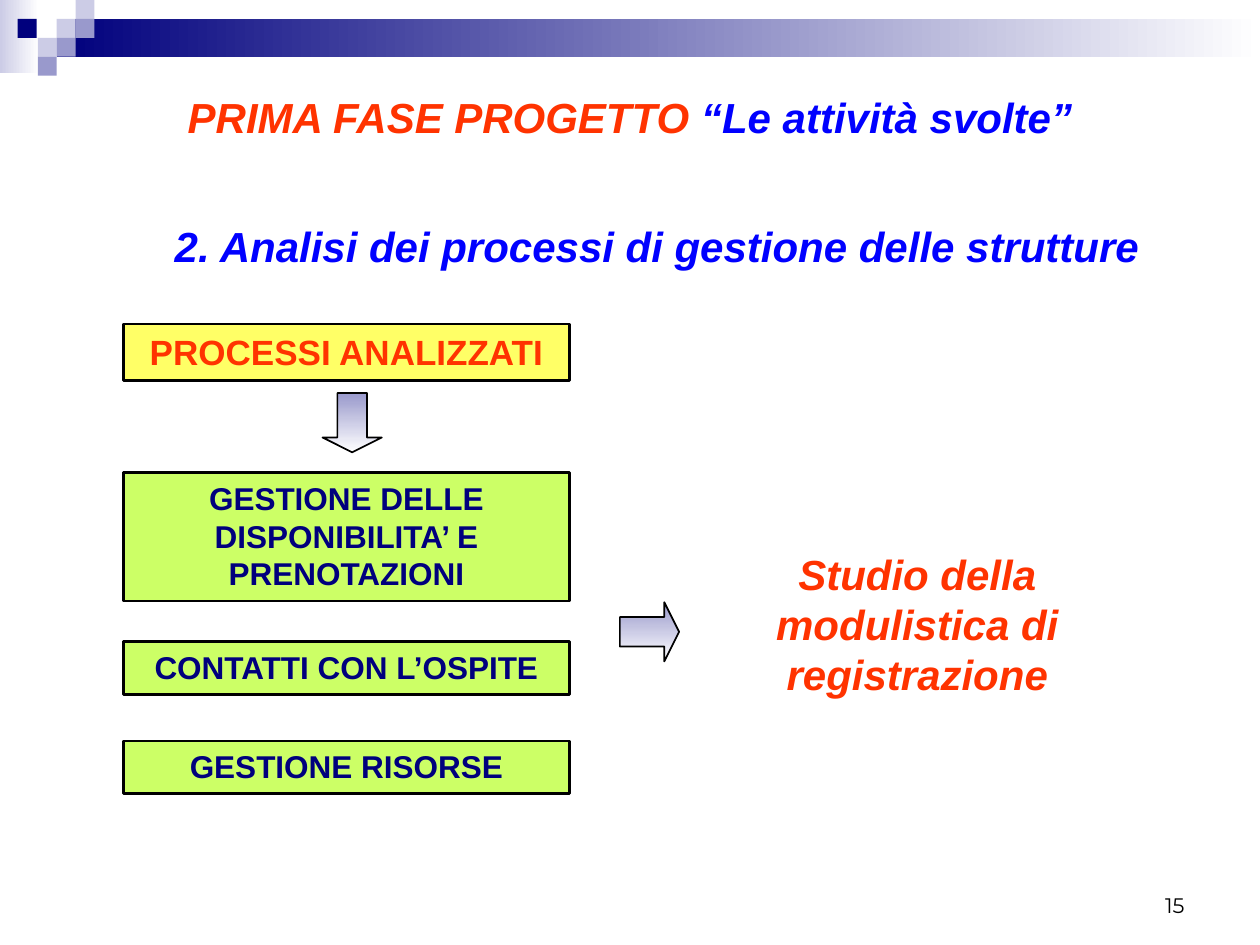
import pptx
import pptx.util
from pptx.dml.color import RGBColor
from pptx.enum.shapes import MSO_SHAPE
from pptx.enum.text import MSO_ANCHOR, MSO_AUTO_SIZE, PP_ALIGN
from pptx.oxml.ns import qn
from pptx.util import Inches

COLORS = {
    "navy": "00007D", "lavender": "CCCCE6", "violet": "9999CC", "white": "FFFFFF",
    "blue": "0000FF", "red": "FF3300", "lime": "CCFF66", "yellow": "FFFF66",
    "black": "000000",
}


def rgb(name):
    return RGBColor.from_string(COLORS[name])


def fill_gradient(shape, start, end, angle):
    """Two-colour gradient that keeps its direction when the shape is rotated."""
    shape.fill.gradient()
    shape.fill.gradient_angle = angle
    for stop, color in zip(shape.fill.gradient_stops, (start, end)):
        stop.color.rgb = rgb(color)
    shape._element.spPr.find(qn("a:gradFill")).set("rotWithShape", "0")


def add_block(slide, bounds, fill=None, preset=MSO_SHAPE.RECTANGLE, line_width=None):
    shape = slide.shapes.add_shape(preset, *map(Inches, bounds))
    shape.shadow.inherit = False
    if fill:
        shape.fill.solid()
        shape.fill.fore_color.rgb = rgb(fill)
    if line_width:
        shape.line.color.rgb = rgb("black")
        shape.line.width = pptx.util.Pt(line_width)
    else:
        shape.line.fill.background()
    return shape


def write_text(shape, parts, size, align=PP_ALIGN.CENTER, font="Arial", bold=True, italic=False):
    """Fill a shape with one paragraph of (text, colour) parts."""
    shape.text_frame.word_wrap = True
    paragraph = shape.text_frame.paragraphs[0]
    paragraph.alignment = align
    for text, color in parts:
        run = paragraph.add_run()
        run.text = text
        run.font.name = font
        run.font.size = pptx.util.Pt(size)
        run.font.bold = bold
        run.font.italic = italic
        run.font.color.rgb = rgb(color)
    return paragraph


def add_heading(slide, bounds, parts):
    box = slide.shapes.add_textbox(*map(Inches, bounds))
    paragraph = write_text(box, parts, 24, italic=True)
    paragraph.space_before = pptx.util.Pt(0)
    spacing = paragraph._p.pPr.find(qn("a:spcBef"))
    spacing.remove(spacing[0])
    spacing.makeelement(qn("a:spcPct"), {"val": "20000"})
    spacing.append(spacing.makeelement(qn("a:spcPct"), {"val": "20000"}))


def add_process(slide, top, height, text, size=18, fill="lime", color="navy"):
    box = add_block(slide, (0.98, top, 3.54, height), fill, line_width=1.5)
    box.text_frame.vertical_anchor = MSO_ANCHOR.TOP
    write_text(box, [(text, color)], size)
    box.text_frame.auto_size = MSO_AUTO_SIZE.SHAPE_TO_FIT_TEXT


def add_arrow(slide, left, top, rotation=0):
    arrow = add_block(slide, (left, top, 0.47, 0.47), preset=MSO_SHAPE.RIGHT_ARROW, line_width=1)
    arrow.adjustments[0] = 0.5
    arrow.adjustments[1] = 0.25
    arrow.rotation = rotation
    fill_gradient(arrow, "violet", "white", 270)


def add_banner(slide):
    fill_gradient(add_block(slide, (0, 0, 0.31, 0.58)), "lavender", "white", 0)
    fill_gradient(add_block(slide, (0.45, 0.15, 9.55, 0.3)), "navy", "white", 0)
    tiles = [
        (0.45, 0.15, "lavender"), (0.6, 0, "lavender"), (0.6, 0.15, "violet"),
        (0.3, 0.3, "lavender"), (0.14, 0.15, "navy"), (0.45, 0.3, "violet"),
        (0.3, 0.45, "violet"),
    ]
    for left, top, color in tiles:
        add_block(slide, (left, top, 0.15, 0.15), color)


def add_slide_number(slide, number):
    box = slide.shapes.add_textbox(*map(Inches, (7.17, 6.83, 2.33, 0.5)))
    box.text_frame.vertical_anchor = MSO_ANCHOR.BOTTOM
    write_text(box, [(number, "black")], 12, PP_ALIGN.RIGHT, "Montserrat", bold=False)


def main():
    presentation = pptx.Presentation()
    presentation.slide_width, presentation.slide_height = Inches(10), Inches(7.5)
    slide = presentation.slides.add_slide(presentation.slide_layouts[6])

    add_banner(slide)
    add_heading(slide, (0.43, 1.7, 9.57, 0.63),
                [("2. Analisi dei processi di gestione delle strutture", "blue")])
    add_process(slide, 3.75, 1.02, "GESTIONE DELLE DISPONIBILITA’ E PRENOTAZIONI")
    add_process(slide, 5.09, 0.42, "CONTATTI CON L’OSPITE")
    add_process(slide, 5.88, 0.42, "GESTIONE RISORSE")
    add_process(slide, 2.57, 0.45, "PROCESSI ANALIZZATI", 20, "yellow", "red")
    add_arrow(slide, 2.56, 3.12, rotation=90)
    add_arrow(slide, 4.92, 4.78)
    add_heading(slide, (5.47, 4.3, 3.62, 2.05),
                [("Studio della modulistica di registrazione", "red")])
    add_heading(slide, (0.43, 0.68, 9.14, 0.55),
                [("PRIMA FASE PROGETTO ", "red"), ("“Le attività svolte”", "blue")])
    add_slide_number(slide, "15")
    presentation.save("out.pptx")


if __name__ == "__main__":
    main()
